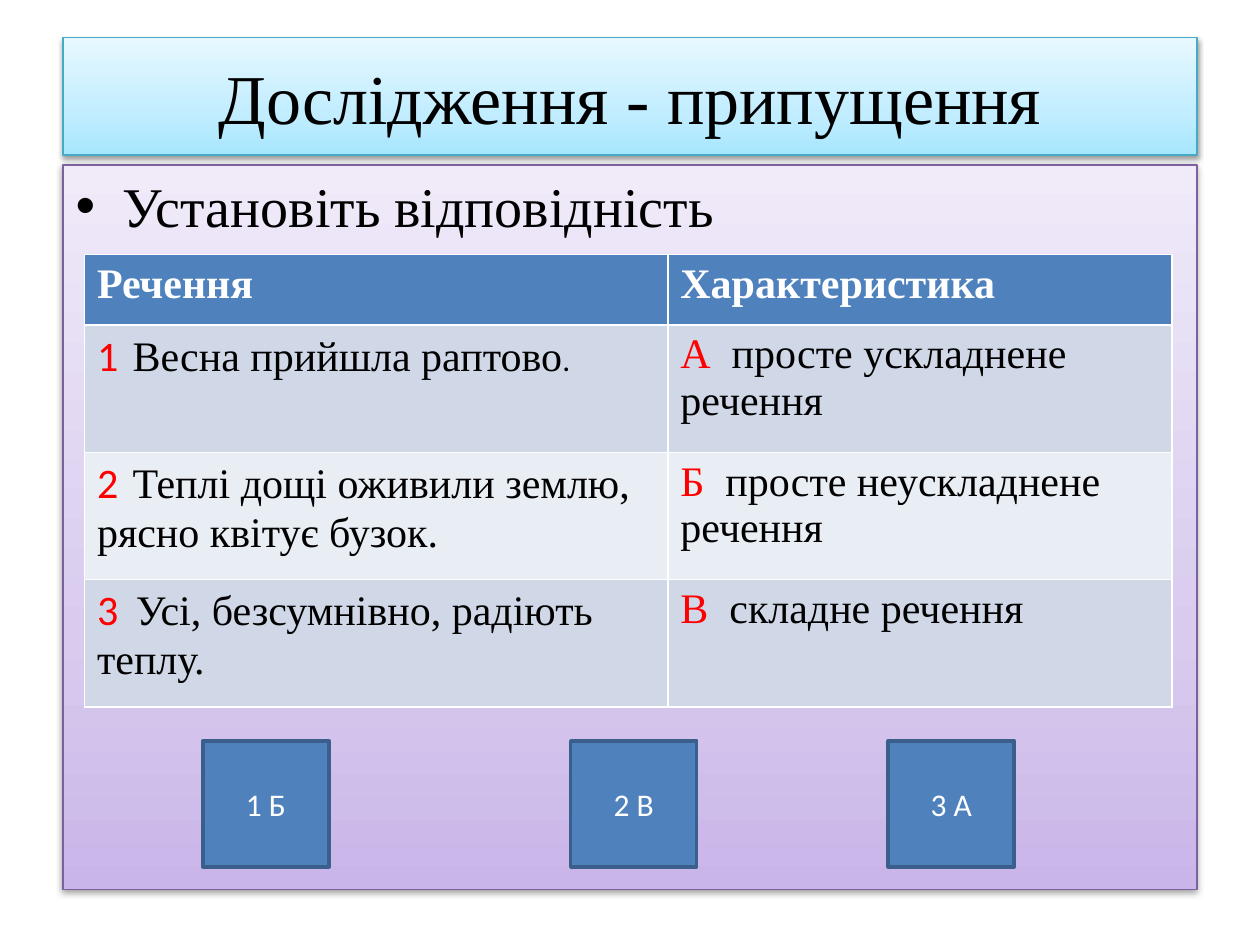
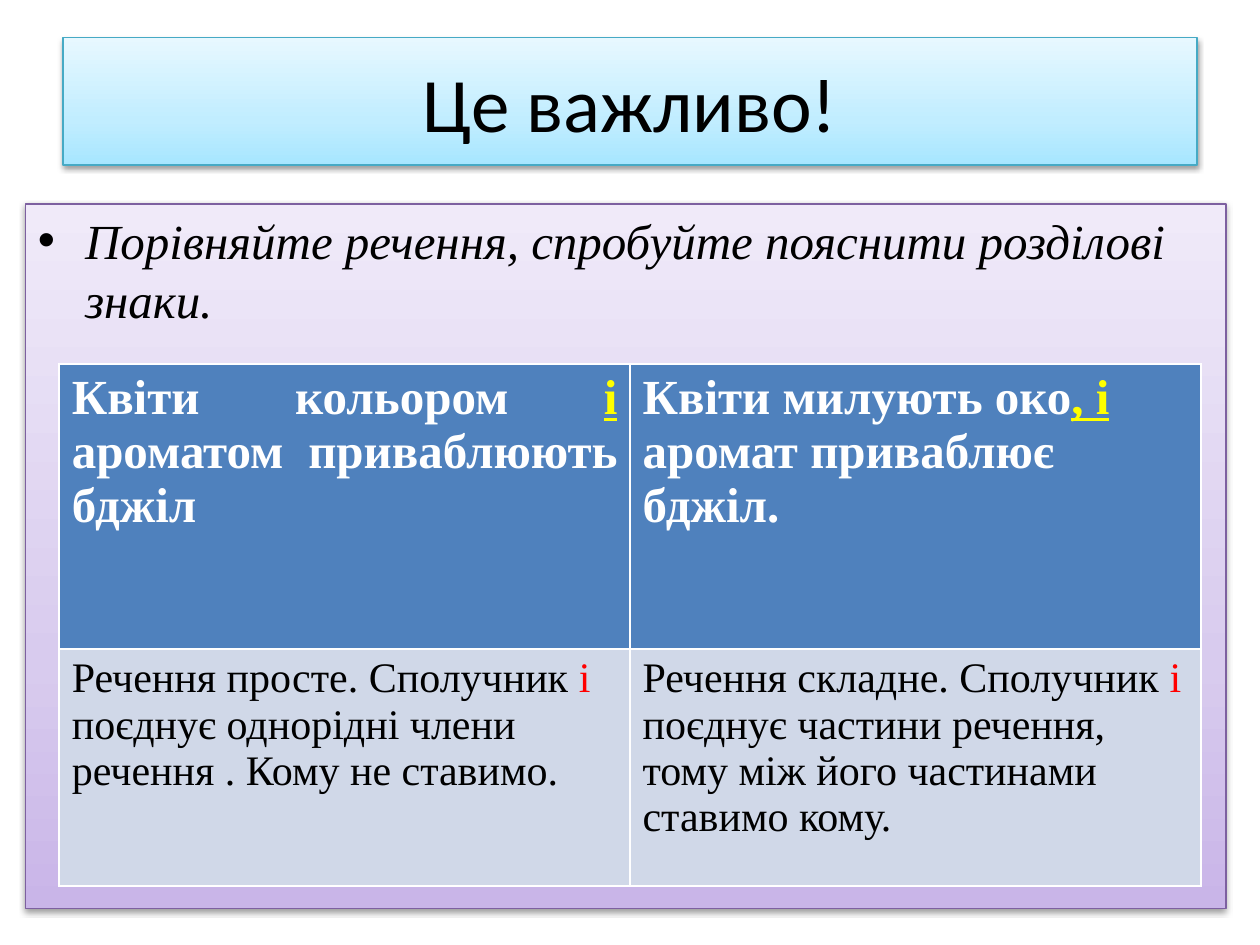
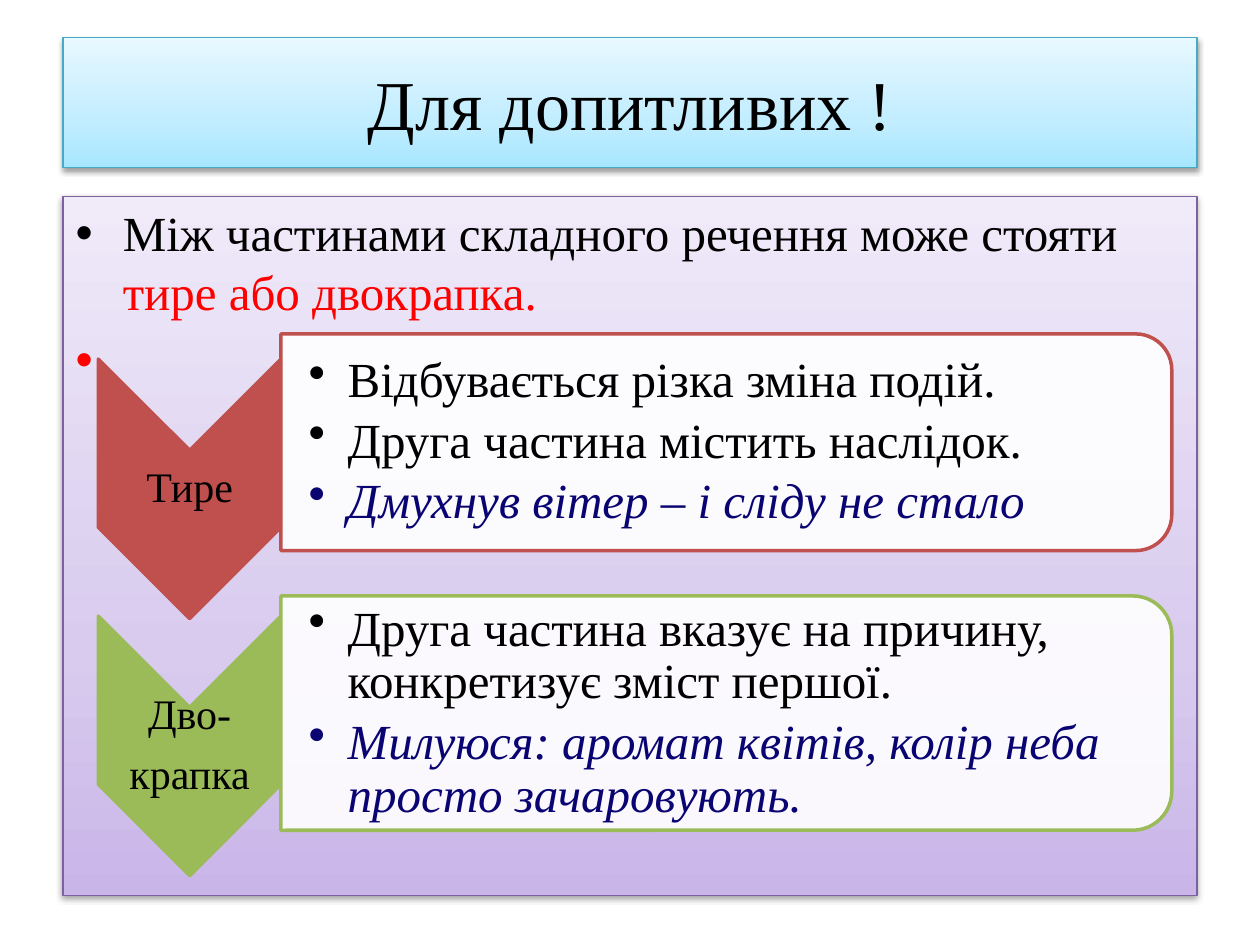
from pptx import Presentation
from pptx.dml.color import RGBColor
from pptx.enum.shapes import MSO_SHAPE
from pptx.enum.text import MSO_ANCHOR, MSO_AUTO_SIZE, PP_ALIGN
from pptx.oxml import parse_xml
from pptx.oxml.ns import nsdecls
from pptx.util import Inches, Pt

BLACK = RGBColor(0, 0, 0)
WHITE = RGBColor(255, 255, 255)
RED = RGBColor(255, 0, 0)
YELLOW = RGBColor(255, 255, 0)
NAVY = RGBColor(0x09, 0x04, 0x72)
BLUE = RGBColor(0x4F, 0x81, 0xBD)
DARK_BLUE = RGBColor(0x3A, 0x5F, 0x8C)
PALE_BLUE = RGBColor(0xD0, 0xD8, 0xE8)
LIGHT_BLUE = RGBColor(0xE9, 0xED, 0xF4)
TEAL = RGBColor(0x46, 0xAA, 0xC5)
PURPLE = RGBColor(0x7D, 0x60, 0xA0)
BRICK = RGBColor(0xC0, 0x50, 0x4D)
GREEN = RGBColor(0x9B, 0xBB, 0x59)
TITLE_GRADIENT = ("A7E6FF", "C1EDFF", "E7F8FF")
BODY_GRADIENT = ("C9B5E8", "D8CBEE", "F0EAF9")

SERIF = "Times New Roman"
SANS = "Calibri"
PLAIN = {"name": SERIF, "size": 24, "color": BLACK, "bold": False, "italic": False, "underline": False}
RED_SERIF = {"color": RED}
RED_NUMBER = {"color": RED, "name": SANS}
SMALL_SANS = {"size": 18, "name": SANS}
HEADER = {"color": WHITE, "bold": True}
BIG_HEADER = {**HEADER, "size": 28}
CONJUNCTION = {**BIG_HEADER, "color": YELLOW, "underline": True}


def write(paragraph, runs, **style):
    for text, changes in runs:
        run = paragraph.add_run()
        run.text = text
        look = {**PLAIN, **style, **changes}
        run.font.name = look["name"]
        run.font.size = Pt(look["size"])
        run.font.color.rgb = look["color"]
        run.font.bold = look["bold"]
        run.font.italic = look["italic"]
        run.font.underline = look["underline"]


def style_panel(panel, box, gradient, line_color):
    panel.left, panel.top, panel.width, panel.height = [Inches(length) for length in box]
    stops = "".join(
        f'<a:gs pos="{position}"><a:srgbClr val="{color}"/></a:gs>'
        for position, color in zip((0, 35000, 100000), gradient)
    )
    properties = panel._element.spPr
    properties.append(parse_xml(
        f'<a:gradFill {nsdecls("a")} rotWithShape="1"><a:gsLst>{stops}</a:gsLst>'
        '<a:lin ang="16200000" scaled="1"/></a:gradFill>'
    ))
    panel.line.color.rgb = line_color
    panel.line.width = Pt(0.75)
    properties.append(parse_xml(
        f'<a:effectLst {nsdecls("a")}><a:outerShdw blurRad="40000" dist="20000" dir="5400000" '
        'rotWithShape="0"><a:srgbClr val="000000"><a:alpha val="38000"/></a:srgbClr>'
        '</a:outerShdw></a:effectLst>'
    ))
    panel.text_frame.auto_size = MSO_AUTO_SIZE.NONE


presentation = Presentation()
presentation.slide_width = Inches(10)
presentation.slide_height = Inches(7.5)

pages = [
    ("Дослідження - припущення", {"size": 40}, 0.93, (0.5, 1.31, 9, 5.75), {"size": 32},
     [[("Установіть відповідність", {})]]),
    ("Це важливо!", {"size": 44, "name": SANS}, 1.01, (0.2, 1.62, 9.53, 5.59), {"size": 28, "italic": True},
     [[("Порівняйте речення, спробуйте пояснити розділові знаки.", {})]]),
    ("Для допитливих !", {"size": 40}, 1.03, (0.5, 1.56, 9, 5.55), {"size": 28},
     [[("Між частинами складного речення може стояти ", {}), ("тире або двокрапка.", RED_SERIF)],
      [("\t", RED_SERIF)]]),
]
slides = []
for heading, heading_style, title_height, body_box, body_style, items in pages:
    slide = presentation.slides.add_slide(presentation.slide_layouts[1])
    slides.append(slide)
    title, body = slide.placeholders
    style_panel(title, (0.5, 0.3, 9, title_height), TITLE_GRADIENT, TEAL)
    write(title.text_frame.paragraphs[0], [(heading, heading_style)])
    style_panel(body, body_box, BODY_GRADIENT, PURPLE)
    for index, runs in enumerate(items):
        paragraph = body.text_frame.add_paragraph() if index else body.text_frame.paragraphs[0]
        write(paragraph, runs, **body_style)

matching_rows = [
    [[("Речення", HEADER)], [("Характеристика", HEADER)]],
    [[("1", RED_NUMBER), ("  ", SMALL_SANS), ("Весна прийшла раптово", {}), (".", SMALL_SANS)],
     [("А", RED_SERIF), ("  просте ускладнене речення", {})]],
    [[("2", RED_NUMBER), ("  ", SMALL_SANS), ("Теплі дощі оживили землю, рясно квітує бузок.", {})],
     [("Б ", RED_SERIF), (" просте неускладнене речення", {})]],
    [[("3", RED_NUMBER), (" ", SMALL_SANS), (" Усі, безсумнівно, радіють теплу.", {})],
     [("В", RED_SERIF), ("  складне речення", {})]],
]
comparison_rows = [
    [[("Квіти кольором ", BIG_HEADER), ("і", CONJUNCTION), (" ароматом приваблюють бджіл", BIG_HEADER)],
     [("Квіти милують око", BIG_HEADER), (", і ", CONJUNCTION), ("аромат приваблює бджіл.", BIG_HEADER)]],
    [[("Речення просте. Сполучник ", {}), ("і ", RED_SERIF),
      ("поєднує однорідні члени речення . Кому не ставимо.", {})],
     [("Речення складне. Сполучник ", {}), ("і ", RED_SERIF),
      ("поєднує частини речення, тому між його частинами ставимо кому.", {})]],
]
tables = []
for slide, left, top, widths, heights, rows in [
    (slides[0], 0.67, 2.02, (4.63, 4), (0.56, 1.01, 1.01, 1.01), matching_rows),
    (slides[1], 0.47, 2.89, (4.53, 4.53), (2.26, 1.88), comparison_rows),
]:
    table = slide.shapes.add_table(
        len(heights), len(widths), Inches(left), Inches(top), Inches(sum(widths)), Inches(sum(heights))
    ).table
    tables.append(table)
    for column, width in zip(table.columns, widths):
        column.width = Inches(width)
    for row_index, (height, row) in enumerate(zip(heights, rows)):
        table.rows[row_index].height = Inches(height)
        for column_index, runs in enumerate(row):
            cell = table.cell(row_index, column_index)
            cell.fill.solid()
            cell.fill.fore_color.rgb = (LIGHT_BLUE, PALE_BLUE)[row_index % 2] if row_index else BLUE
            write(cell.text_frame.paragraphs[0], runs)
tables[1].cell(0, 0).text_frame.paragraphs[0].alignment = PP_ALIGN.JUSTIFY

for left, answer in [(1.61, "1 Б"), (4.53, "2 В"), (7.05, "3 А")]:
    square = slides[0].shapes.add_shape(MSO_SHAPE.RECTANGLE, Inches(left), Inches(5.88), Inches(1), Inches(1))
    square.shadow.inherit = False
    square.fill.solid()
    square.fill.fore_color.rgb = BLUE
    square.line.color.rgb = DARK_BLUE
    square.line.width = Pt(2)
    paragraph = square.text_frame.paragraphs[0]
    paragraph.alignment = PP_ALIGN.CENTER
    write(paragraph, [(answer, {})], name=SANS, size=18, color=WHITE)

EXAMPLE = {"color": NAVY, "italic": True}
CHEVRON_WIDTH, CHEVRON_HEIGHT = 1.45, 2.06
CHEVRON_LEFT, CARD_LEFT, CARD_WIDTH = 0.78, 2.23, 7.07
marks = [
    (BRICK, 3.88, 3.51, 1.72, ["Тире"],
     [("Відбувається різка зміна подій.", {}), ("Друга частина містить наслідок.", {}),
      ("Дмухнув вітер – і сліду не стало", EXAMPLE)]),
    (GREEN, 5.92, 5.66, 1.86, ["Дво-", "крапка"],
     [("Друга частина вказує на причину, конкретизує зміст першої.", {}),
      ("Милуюся: аромат квітів, колір неба просто зачаровують.", EXAMPLE)]),
]
shapes = slides[2].shapes
for color, chevron_middle, card_middle, card_height, label, points in marks:
    for preset, left, middle, width, height, fill in [
        (MSO_SHAPE.CHEVRON, CHEVRON_LEFT, chevron_middle, CHEVRON_WIDTH, CHEVRON_HEIGHT, color),
        (MSO_SHAPE.ROUND_2_SAME_RECTANGLE, CARD_LEFT, card_middle, CARD_WIDTH, card_height, WHITE),
    ]:
        shape = shapes.add_shape(
            preset, Inches(left + (width - height) / 2), Inches(middle - width / 2), Inches(height), Inches(width)
        )
        shape.rotation = 90
        shape.shadow.inherit = False
        shape.fill.solid()
        shape.fill.fore_color.rgb = fill
        shape.line.color.rgb = color
        shape.line.width = Pt(2)
    card_color = shape._element.spPr.find(".//{*}solidFill/{*}srgbClr")
    card_color.append(parse_xml(f'<a:alpha {nsdecls("a")} val="90000"/>'))

    for left, middle, width, height, inset, lines, size, gap in [
        (CHEVRON_LEFT, chevron_middle, CHEVRON_WIDTH, 0.62, 0.02, [(text, {}) for text in label], 24, 8.4),
        (CARD_LEFT, card_middle, CARD_WIDTH - 0.08, card_height - 0.18, 0.22, points, 28, 4.2),
    ]:
        text_box = shapes.add_textbox(Inches(left), Inches(middle - height / 2), Inches(width), Inches(height))
        frame = text_box.text_frame
        frame.word_wrap = True
        frame.vertical_anchor = MSO_ANCHOR.MIDDLE
        frame.margin_left = Inches(inset)
        frame.margin_top = frame.margin_right = frame.margin_bottom = Inches(0.02)
        for index, line in enumerate(lines):
            paragraph = frame.add_paragraph() if index else frame.paragraphs[0]
            paragraph.line_spacing = 0.9
            paragraph.space_after = Pt(gap)
            write(paragraph, [line], size=size)
            if lines is points:
                properties = paragraph._p.get_or_add_pPr()
                properties.set("marL", str(Inches(0.31)))
                properties.set("indent", str(-Inches(0.31)))
                properties.append(parse_xml(f'<a:buChar {nsdecls("a")} char="•"/>'))
            else:
                paragraph.alignment = PP_ALIGN.CENTER

presentation.save("out.pptx")
